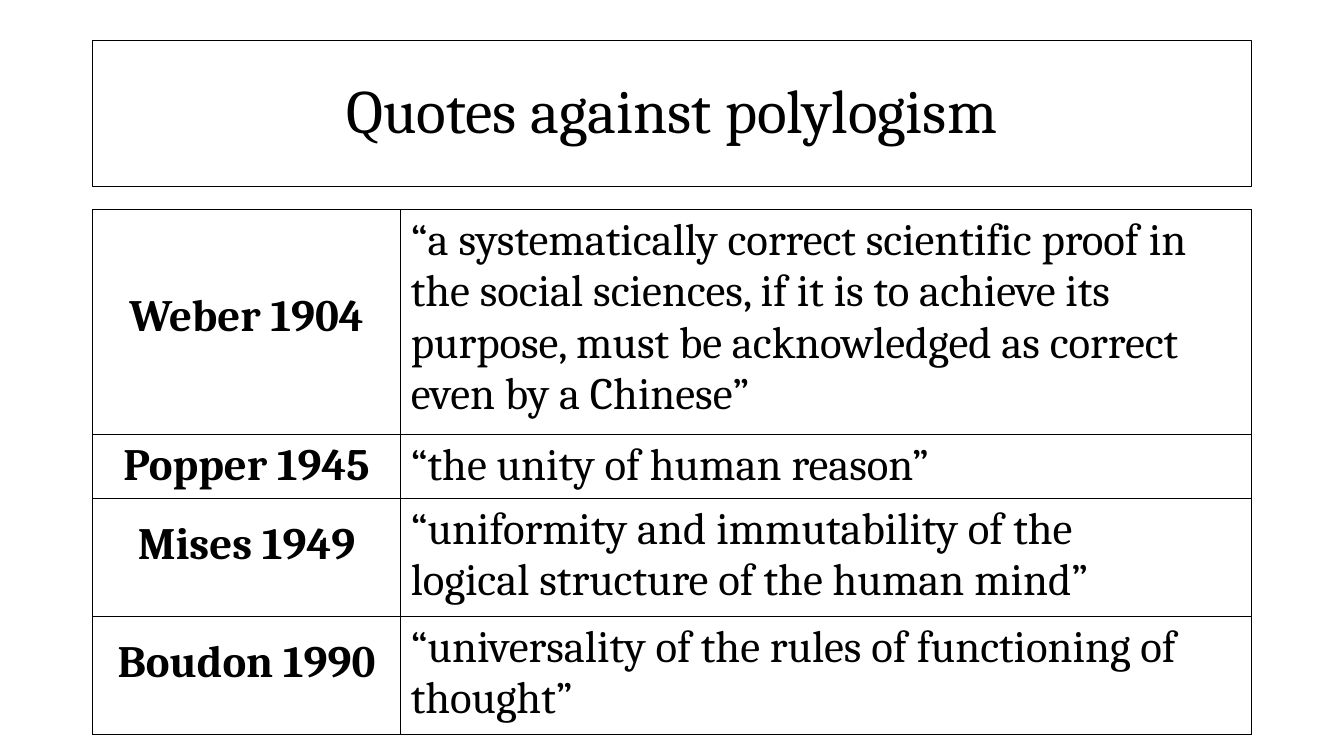
from dataclasses import dataclass

from lxml import etree
from pptx import Presentation
from pptx.dml.color import RGBColor
from pptx.enum.text import MSO_ANCHOR, PP_ALIGN
from pptx.oxml.ns import qn
from pptx.util import Cm, Pt

CENTER, LEFT = PP_ALIGN.CENTER, PP_ALIGN.LEFT
MIDDLE, TOP = MSO_ANCHOR.MIDDLE, MSO_ANCHOR.TOP


@dataclass(frozen=True)
class Theme:
    font: str = "Cambria"
    ink: RGBColor = RGBColor(0, 0, 0)
    title_size: Pt = Pt(44)
    body_size: Pt = Pt(32)
    frame_width: Pt = Pt(0.75)
    grid_width: Pt = Pt(1)


THEME = Theme()
MARGIN_LEFT, CONTENT_WIDTH = Cm(2.33), Cm(29.21)
AUTHOR_WIDTH = Cm(7.77)

# Author, quote paragraphs, row height and space above the author in cm
QUOTES = [
    ("Weber 1904",
     ["“a systematically correct scientific proof in the social sciences, "
      "if it is to achieve its purpose, must be acknowledged as correct "
      "even by a Chinese”"], 5.46, 2.06),
    ("Popper 1945", ["“the unity of human reason”"], 1.53, 0.13),
    ("Mises 1949",
     ["“uniformity and immutability of the",
      "logical structure of the human mind”"], 2.87, 0.52),
    ("Boudon 1990",
     ["“universality of the rules of functioning of thought”"], 2.87, 0.52),
]


def write(frame, lines, size, align, bold=False):
    frame.word_wrap = True
    frame.text = "\n".join(lines)
    for paragraph in frame.paragraphs:
        paragraph.alignment = align
        font = paragraph.font
        font.name, font.size, font.bold = THEME.font, size, bold
        font.color.rgb = THEME.ink


def add_title(slide, wording):
    title = slide.shapes.add_textbox(MARGIN_LEFT, Cm(1.01), CONTENT_WIDTH, Cm(3.68))
    title.line.color.rgb = THEME.ink
    title.line.width = THEME.frame_width
    write(title.text_frame, [wording], THEME.title_size, CENTER)
    title.text_frame.vertical_anchor = MIDDLE
    title.text_frame.paragraphs[0].line_spacing = 0.9


def draw_borders(cell):
    properties = cell._tc.get_or_add_tcPr()
    for position, side in enumerate(("a:lnL", "a:lnR", "a:lnT", "a:lnB")):
        border = etree.Element(qn(side), w=str(THEME.grid_width))
        fill = etree.SubElement(border, qn("a:solidFill"))
        etree.SubElement(fill, qn("a:srgbClr"), val=str(THEME.ink))
        properties.insert(position, border)


def fill_cell(cell, lines, align, bold=False, space_above=0.13):
    write(cell.text_frame, lines, THEME.body_size, align, bold)
    cell.vertical_anchor = TOP
    cell.margin_top = Cm(space_above)
    cell.fill.background()
    draw_borders(cell)


def add_quote_table(slide, quotes):
    total_height = Cm(sum(height for _, _, height, _ in quotes))
    table = slide.shapes.add_table(
        len(quotes), 2, MARGIN_LEFT, Cm(5.28), CONTENT_WIDTH, total_height).table
    table.first_row = table.horz_banding = False
    table.columns[0].width = AUTHOR_WIDTH
    table.columns[1].width = CONTENT_WIDTH - AUTHOR_WIDTH
    for index, (author, quote, height, space_above) in enumerate(quotes):
        table.rows[index].height = Cm(height)
        fill_cell(table.cell(index, 0), [author], CENTER, True, space_above)
        fill_cell(table.cell(index, 1), quote, LEFT)


def main():
    deck = Presentation()
    deck.slide_width, deck.slide_height = Cm(33.87), Cm(19.05)
    slide = deck.slides.add_slide(deck.slide_layouts[6])

    # Framed heading
    add_title(slide, "Quotes against polylogism")

    # Authors and their quotes
    add_quote_table(slide, QUOTES)

    deck.save("out.pptx")


if __name__ == "__main__":
    main()
